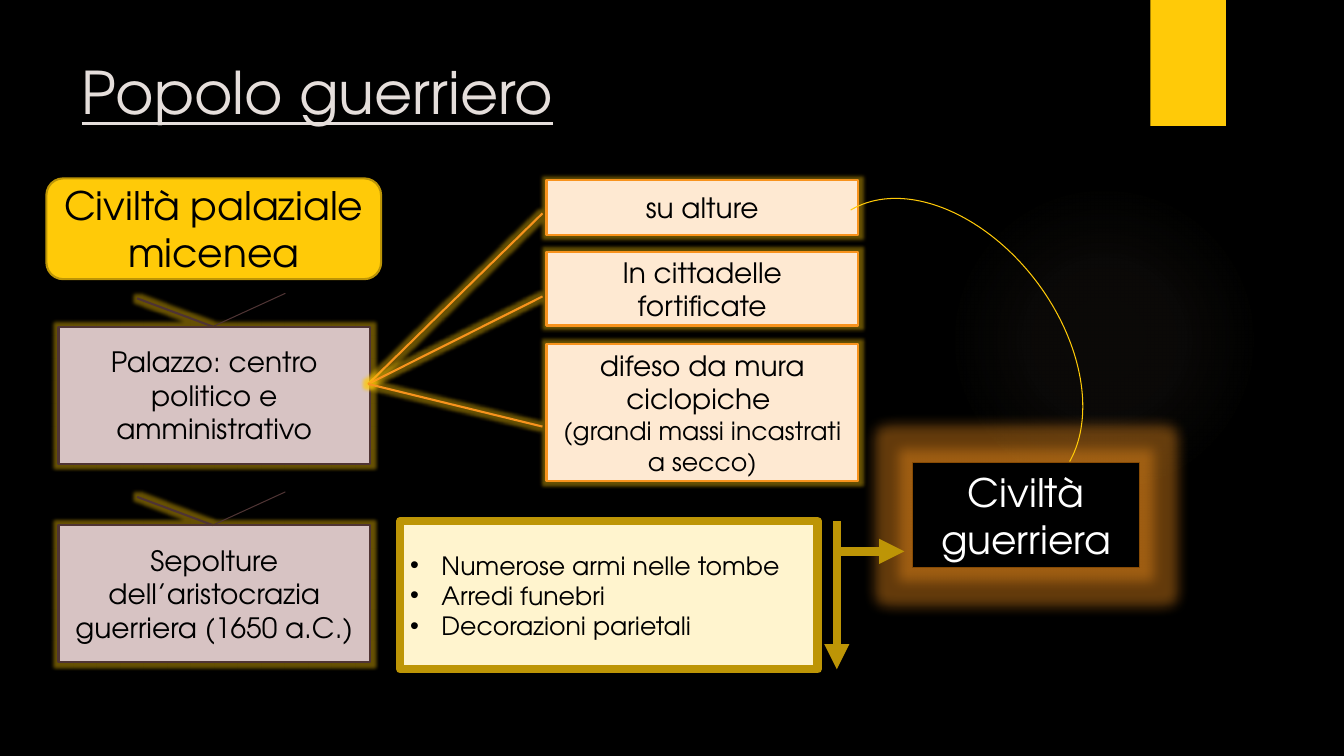
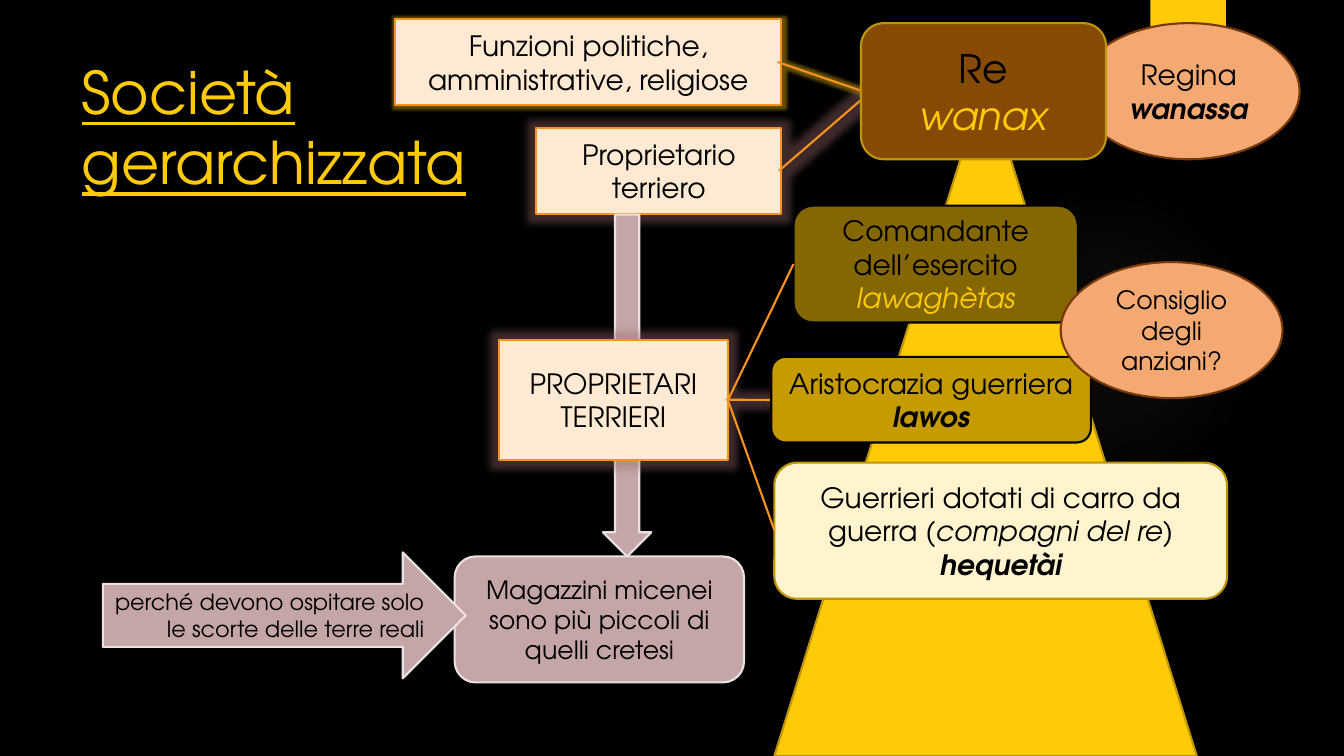
"""Two slides on the Mycenaean warrior society."""
import pptx
import pptx.util
import pptx.dml.color
import pptx.enum.shapes
import pptx.enum.text
import pptx.oxml
import pptx.oxml.ns
from lxml import etree

Inches, Pt = pptx.util.Inches, pptx.util.Pt
SHAPE = pptx.enum.shapes.MSO_SHAPE
ALIGN = pptx.enum.text.PP_ALIGN
ANCHOR = pptx.enum.text.MSO_ANCHOR
qn = pptx.oxml.ns.qn
FONT = "TeX Gyre Adventor"
BLACK, YELLOW, GOLD, CREAM = "000000", "FFCA08", "BD9506", "FFF4CE"
ORANGE, PEACH, MAUVE, PALE, PLUM = "F8931D", "FEE9D2", "C4A6A6", "EBE1E1", "4F3434"
SALMON, RUST, BROWN, ROSE = "F4A973", "77380A", "864A04", "9C6A6A"
YELLOW_GLOW, ROSE_GLOW, ORANGE_GLOW = (YELLOW, 5, 40), (ROSE, 11, 40), (ORANGE, 18, 40)


def rgb(value):
    """Turn a hex string into a colour."""
    return pptx.dml.color.RGBColor.from_string(value)


def sub(parent, tag, **attrs):
    """Add a drawing element with attributes."""
    return etree.SubElement(parent, qn(tag), {k: str(v) for k, v in attrs.items()})


def add_glow(sp, color, radius, alpha):
    """Give a shape a glow of a radius in points and an opacity in percent."""
    effects = sp.element.spPr.find(qn("a:effectLst"))
    glow = sub(effects, "a:glow", rad=int(Pt(radius)))
    sub(sub(glow, "a:srgbClr", val=color), "a:alpha", val=alpha * 1000)


def write(sp, paragraphs, size, color=BLACK, align=ALIGN.CENTER, bullet=False):
    """Fill a shape with paragraphs, each a list of runs (text, style, colour, size)."""
    tf = sp.text_frame
    tf.word_wrap = True
    tf.vertical_anchor = ANCHOR.MIDDLE
    for i, runs in enumerate(paragraphs):
        p = tf.add_paragraph() if i else tf.paragraphs[0]
        p.alignment = align
        if bullet:
            pPr = p._p.get_or_add_pPr()
            pPr.set("marL", str(Inches(0.31)))
            pPr.set("indent", str(-Inches(0.31)))
            sub(pPr, "a:buFont", typeface="Arial")
            sub(pPr, "a:buChar", char="•")
        for text, style, run_color, run_size in runs:
            r = p.add_run()
            r.text = text
            r.font.name = FONT
            r.font.size = Pt(run_size or size)
            r.font.color.rgb = rgb(run_color or color)
            r.font.bold = "b" in style
            r.font.italic = "i" in style


def run(text, style="", color=None, size=None):
    """Describe one run of text."""
    return text, style, color, size


def shape(s, kind, box, fill=None, line=None, width=1.5, glow=None):
    """Add a flat preset shape at left, top, width, height."""
    sp = s.shapes.add_shape(kind, *map(Inches, box))
    sp.shadow.inherit = False
    if fill:
        sp.fill.solid()
        sp.fill.fore_color.rgb = rgb(fill)
    else:
        sp.fill.background()
    if line:
        sp.line.color.rgb = rgb(line)
        sp.line.width = Pt(width)
    else:
        sp.line.fill.background()
    if glow:
        add_glow(sp, *glow)
    return sp


def callout(s, box, start, end, fill=PEACH, line=ORANGE, width=1.5,
            glow=YELLOW_GLOW, kind=SHAPE.LINE_CALLOUT_1):
    """Add a callout whose leader runs between two points on the slide."""
    sp = shape(s, kind, box, fill, line, width, glow)
    x, y, w, h = box
    for i, (px, py) in enumerate((start, end)):
        sp.adjustments[2 * i] = (py - y) / h
        sp.adjustments[2 * i + 1] = (px - x) / w
    return sp


def connect(s, start, end, color, width):
    """Draw a flat straight line between two points."""
    c = s.shapes.add_connector(pptx.enum.shapes.MSO_CONNECTOR.STRAIGHT,
                               *map(Inches, start + end))
    c.line.color.rgb = rgb(color)
    c.line.width = Pt(width)
    sub(c.element.spPr, "a:effectLst")


def decorate_master(prs, s):
    """Put the black ground, soft light and yellow tab on the master."""
    master = prs.slide_master
    master.background.fill.solid()
    master.background.fill.fore_color.rgb = rgb(BLACK)
    light = shape(s, SHAPE.OVAL, (9.41, 1.83, 3.08, 3.08))
    grad = etree.Element(qn("a:gradFill"))
    stops = sub(grad, "a:gsLst")
    for pos, alpha in ((0, 7), (36, 6), (69, 0)):
        stop = sub(stops, "a:gs", pos=pos * 1000)
        sub(sub(stop, "a:srgbClr", val="968071"), "a:alpha", val=alpha * 1000)
    sub(sub(grad, "a:path", path="circle"), "a:fillToRect",
        l=50000, t=50000, r=50000, b=50000)
    spPr = light.element.spPr
    spPr.replace(spPr.find(qn("a:noFill")), grad)
    tab = shape(s, SHAPE.RECTANGLE, (11.41, 0, 0.75, 1.25), YELLOW)
    for i, sp in enumerate((light, tab)):
        master.shapes.element.insert(2 + i, sp.element)


def set_title(s, text, color):
    """Place and format the underlined title."""
    sp = s.shapes.title
    sp.left, sp.top, sp.width, sp.height = map(Inches, (0.71, 0.5, 10.29, 1.53))
    tf = sp.text_frame
    tf.text = text
    tf.word_wrap = True
    tf.vertical_anchor = ANCHOR.TOP
    p = tf.paragraphs[0]
    p.alignment = ALIGN.LEFT
    for r in p.runs:
        r.font.name = FONT
        r.font.size = Pt(42)
        r.font.underline = True
        r.font.color.rgb = rgb(color)


def palace_topics(s, x, y):
    """Draw the palace heading and its two topics."""
    sp = shape(s, SHAPE.ROUNDED_RECTANGLE, (x, y, 3.32, 1), YELLOW, GOLD)
    write(sp, [[run("Civiltà palaziale")], [run("micenea")]], 28)
    topics = ("Palazzo: centro politico e amministrativo",
              "Sepolture dell’aristocrazia guerriera (1650 a.C.)")
    for i, text in enumerate(topics):
        left, top = x + 0.12, y + 1.47 + 1.97 * i
        joint = (left + 1.53, top)
        sp = callout(s, (left, top, 3.09, 1.36), joint, (left + 0.78, top - 0.28),
                     "D7C3C3", PLUM)
        write(sp, [[run(text)]], 20)
        connect(s, joint, (left + 2.25, top - 0.33), PLUM, 0.75)


def palace_features(s, x, y):
    """Draw the three palace features, all led from the palace box."""
    hub = (x - 1.77, y + 2.02)
    features = (
        (0, 0.54, [[run("su alture")]]),
        (0.71, 0.73, [[run("In cittadelle fortificate")]]),
        (1.62, 1.36, [[run("difeso da mura ciclopiche ")],
                      [run("(grandi massi incastrati a secco)", size=18)]]),
    )
    for dy, h, paragraphs in features:
        top = y + dy
        sp = callout(s, (x, top, 3.09, h), (x - 0.04, top + 0.605 * h), hub)
        write(sp, paragraphs, 20)


def grave_finds(s, x, y):
    """Draw the list of grave finds with its arrows."""
    sp = callout(s, (x, y, 4.14, 1.47), (x + 4.33, y + 0.3), (x + 5, y + 0.3),
                 CREAM, GOLD, 6, None, SHAPE.LINE_CALLOUT_1_BORDER_AND_ACCENT_BAR)
    sub(sp.element.spPr.find(qn("a:ln")), "a:tailEnd", type="triangle")
    finds = ("Numerose armi nelle tombe", "Arredi funebri", "Decorazioni parietali")
    write(sp, [[run(t)] for t in finds], 18, align=ALIGN.LEFT, bullet=True)


def warrior_conclusion(s, x, y):
    """Draw the glowing conclusion and the arc that leads to it."""
    sp = shape(s, SHAPE.RECTANGLE, (x, y, 2.25, 1.04), BLACK, BROWN, 0.75, ORANGE_GLOW)
    write(sp, [[run("Civiltà guerriera")]], 28, "FFFFFF")
    arc = shape(s, SHAPE.ARC, (x - 0.79, y - 2.8, 2.25, 3.37), line=YELLOW, width=0.75)
    arc.adjustments[0], arc.adjustments[1] = 163.64, 47.43
    arc.rotation = 323


def landowners(s, x, y):
    """Draw the land chain from the king's functions to the storerooms."""
    def note(box, text, end, glow):
        """Add a callout led from its right side."""
        left, top, w, h = box
        sp = callout(s, box, (left + 0.99 * w, top + h / 2), end, glow=glow)
        write(sp, [[run(text)]], 20)

    note((x + 2.9, y, 3.83, 0.85), "Funzioni politiche, amministrative, religiose",
         (x + 7.55, y + 0.72), YELLOW_GLOW)
    note((x + 4.3, y + 1.08, 2.43, 0.85), "Proprietario terriero",
         (x + 7.58, y + 0.75), ROSE_GLOW)
    shape(s, SHAPE.DOWN_ARROW, (x + 4.96, y + 1.94, 0.48, 3.39), MAUVE, PALE)
    note((x + 3.93, y + 3.18, 2.27, 1.19), "PROPRIETARI TERRIERI",
         (x + 6.92, y + 3.78), ROSE_GLOW)
    sp = shape(s, SHAPE.ROUNDED_RECTANGLE, (x + 3.49, y + 5.33, 2.87, 1.25), MAUVE, PALE)
    write(sp, [[run("Magazzini micenei sono più piccoli di quelli cretesi")]], 18)
    sp = shape(s, SHAPE.RIGHT_ARROW, (x, y + 5.29, 3.6, 1.25), MAUVE, PALE)
    write(sp, [[run("perché devono ospitare solo le scorte delle terre reali")]], 16,
          align=ALIGN.RIGHT)


def hierarchy(s, x, y):
    """Draw the ranks from the king down to the warriors, over the pyramid."""
    rounded, oval = SHAPE.ROUNDED_RECTANGLE, SHAPE.OVAL
    ranks = (
        (oval, (3.04, 0, 2.2, 1.35), SALMON, RUST, 20,
         [[run("Regina")], [run("wanassa", "bi")]]),
        (rounded, (0.22, 1.81, 2.82, 1.16), "846700", BLACK, 20,
         [[run("Comandante dell’esercito")], [run("lawaghètas", "i", YELLOW)]]),
        (rounded, (0.89, 0, 2.43, 1.35), BROWN, GOLD, 28,
         [[run("Re")], [run("wanax", "i", YELLOW)]]),
        (rounded, (0, 3.31, 3.17, 0.85), "C59B00", BLACK, 20,
         [[run("Aristocrazia guerriera")], [run("lawos", "bi")]]),
        (rounded, (0.03, 4.36, 4.49, 1.35), CREAM, GOLD, 20,
         [[run("Guerrieri dotati di carro da guerra ("), run("compagni del re", "i"),
           run(")")], [run("hequetài", "bi")]]),
        (oval, (2.87, 2.37, 2.2, 1.35), SALMON, RUST, 18,
         [[run("Consiglio degli anziani?")]]),
    )
    for kind, (dx, dy, w, h), fill, line, size, paragraphs in ranks:
        sp = shape(s, kind, (x + dx, y + dy, w, h), fill, line)
        write(sp, paragraphs, size)
    for dx, dy in ((0.22, 2.39), (0.03, 5.03)):
        connect(s, (x - 0.43, y + 3.74), (x + dx, y + dy), ORANGE, 1.5)


def warrior_slide(s):
    """Build the slide on the warrior people."""
    set_title(s, "Popolo guerriero", "E5DEDB")
    palace_topics(s, 0.46, 1.77)
    palace_features(s, 5.42, 1.79)
    warrior_conclusion(s, 9.05, 4.59)
    grave_finds(s, 3.97, 5.17)


def society_slide(s):
    """Build the slide on the ranked society."""
    shape(s, SHAPE.ISOSCELES_TRIANGLE, (7.68, 0.78, 4.19, 6.72), YELLOW, GOLD)
    set_title(s, "Società\vgerarchizzata", YELLOW)
    landowners(s, 1.02, 0.19)
    hierarchy(s, 7.65, 0.23)


def main():
    """Build and save the presentation."""
    prs = pptx.Presentation()
    prs.slide_width, prs.slide_height = Inches(13.33), Inches(7.5)
    slides = [prs.slides.add_slide(prs.slide_layouts[5]) for _ in range(2)]
    decorate_master(prs, slides[0])
    warrior_slide(slides[0])
    society_slide(slides[1])
    prs.save("out.pptx")


if __name__ == "__main__":
    main()
